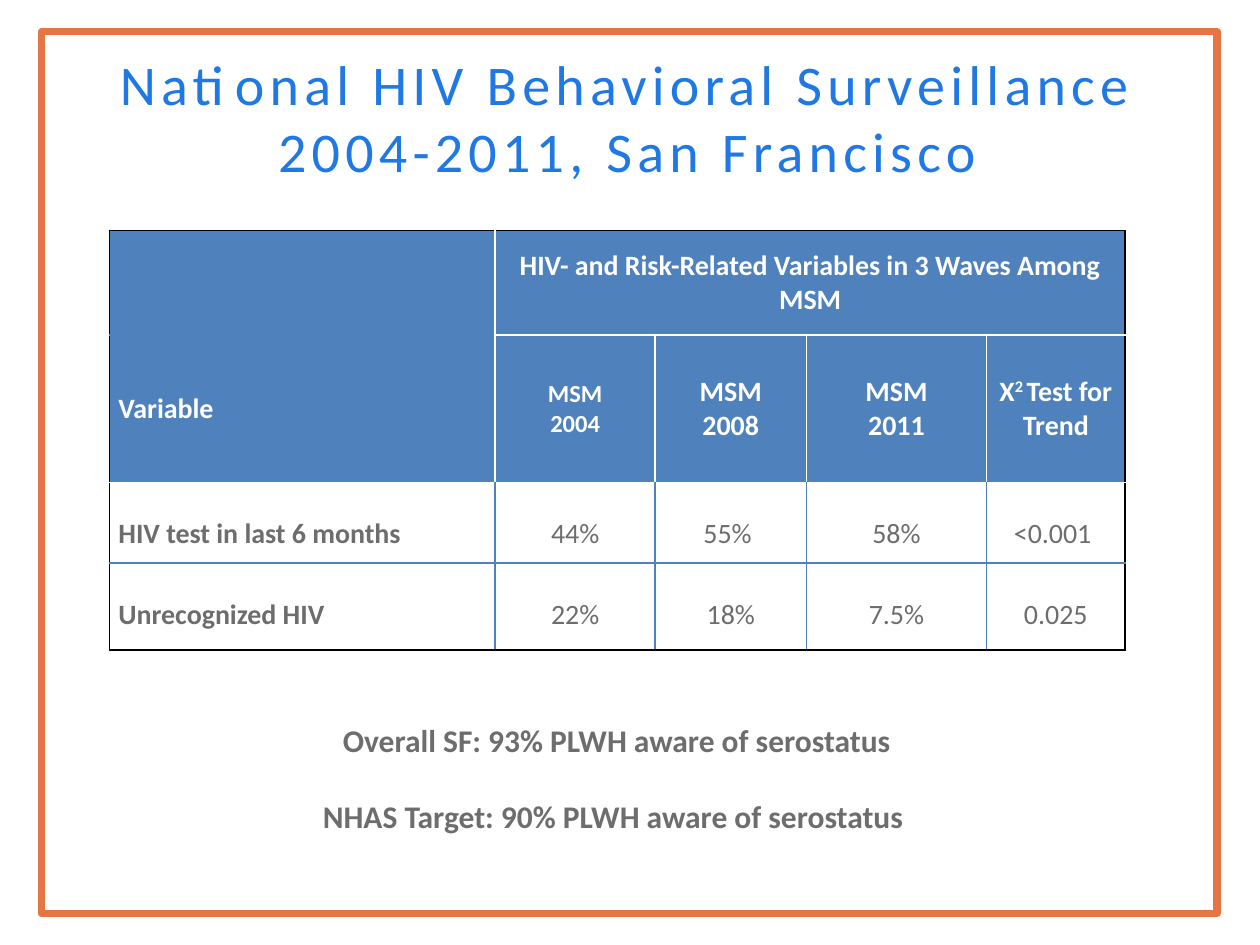
from dataclasses import dataclass

from lxml.etree import SubElement
from pptx import Presentation
from pptx.dml.color import RGBColor
from pptx.enum.shapes import MSO_SHAPE
from pptx.enum.text import MSO_ANCHOR, PP_ALIGN
from pptx.oxml.ns import qn
from pptx.util import Inches, Pt


@dataclass(frozen=True)
class Theme:
    font: str = "Calibri"
    frame: str = "E57543"
    title: str = "1F78E3"
    header: str = "4F81BD"
    white: str = "FFFFFF"
    black: str = "000000"
    text: str = "6D6D6D"
    title_size: int = 32
    note_size: int = 18
    table_size: int = 16
    small_size: int = 14


HEADER_ROWS = 2
COLUMN_WIDTHS = [3.06, 1.27, 1.2, 1.43, 1.1]
ROW_HEIGHTS = [0.83, 1.17, 0.64, 0.69]
ROWS = [
    ["", "HIV- and Risk-Related Variables in 3 Waves Among MSM", "", "", ""],
    ["Variable", "MSM\v2004", "MSM\n2008", "MSM\n2011", "X"],
    ["HIV test in last 6 months", "44%", "55% ", "58%", "<0.001 "],
    ["Unrecognized HIV", "22%", "18%", "7.5%", "0.025"],
]


class SlideBuilder:
    def __init__(self, slide, theme):
        self.slide = slide
        self.theme = theme

    def format_run(self, run, size, color, bold=False):
        run.font.name = self.theme.font
        run.font.size = Pt(size)
        run.font.color.rgb = RGBColor.from_string(color)
        run.font.bold = bold

    def format_frame(self, text_frame, size, color, bold=False, align=PP_ALIGN.CENTER):
        for paragraph in text_frame.paragraphs:
            paragraph.alignment = align
            for run in paragraph.runs:
                self.format_run(run, size, color, bold)

    def frame(self, left, top, width, height):
        shape = self.slide.shapes.add_shape(
            MSO_SHAPE.RECTANGLE, Inches(left), Inches(top), Inches(width), Inches(height))
        shape.shadow.inherit = False
        shape.fill.background()
        shape.line.color.rgb = RGBColor.from_string(self.theme.frame)
        shape.line.width = Pt(4.25)

    def text(self, box, text, size, color, bold=False, anchor=MSO_ANCHOR.TOP, gap=0, spacing=0):
        shape = self.slide.shapes.add_textbox(*(Inches(length) for length in box))
        text_frame = shape.text_frame
        text_frame.word_wrap = True
        text_frame.vertical_anchor = anchor
        text_frame.text = text
        self.format_frame(text_frame, size, color, bold)
        for paragraph in text_frame.paragraphs[1:]:
            paragraph.space_before = Pt(gap)
        if spacing:
            for run in text_frame.paragraphs[0].runs:
                run.font.language_id = None
                run._r.get_or_add_rPr().set("spc", str(spacing * 100))

    def border_colors(self, row, column, span):
        theme = self.theme

        def horizontal(edge):
            if edge in (0, len(ROWS)):
                return theme.black
            # The two header cells above "Variable" read as one
            joined = edge == 1 and column == 0
            return theme.white if edge <= HEADER_ROWS and not joined else theme.header

        def vertical(edge):
            if edge in (0, len(COLUMN_WIDTHS)):
                return theme.black
            return theme.white if row < HEADER_ROWS else theme.header

        return {"a:lnL": vertical(column), "a:lnR": vertical(column + span),
                "a:lnT": horizontal(row), "a:lnB": horizontal(row + 1)}

    def cell(self, cell, text, row, column):
        theme = self.theme
        is_header = row < HEADER_ROWS
        span = cell.span_width if cell.is_merge_origin else 1

        # Borders come before the fill in the cell properties
        properties = cell._tc.get_or_add_tcPr()
        for tag, color in self.border_colors(row, column, span).items():
            line = SubElement(properties, qn(tag), w=str(Pt(1)))
            SubElement(SubElement(line, qn("a:solidFill")), qn("a:srgbClr"), val=color)
        if is_header:
            cell.fill.solid()
            cell.fill.fore_color.rgb = RGBColor.from_string(theme.header)
        else:
            cell.fill.background()

        cell.margin_left = cell.margin_right = Inches(0.07)
        cell.margin_top = cell.margin_bottom = 0
        cell.vertical_anchor = MSO_ANCHOR.MIDDLE if is_header else MSO_ANCHOR.TOP
        if not text:
            return
        cell.text_frame.text = text
        self.format_frame(
            cell.text_frame,
            theme.small_size if (row, column) == (1, 1) else theme.table_size,
            theme.white if is_header else theme.text,
            bold=is_header or column == 0,
            align=PP_ALIGN.LEFT if column == 0 else PP_ALIGN.CENTER)
        if not is_header:
            cell.text_frame.paragraphs[0].line_spacing = 2.0

    def table(self, left, top):
        table = self.slide.shapes.add_table(
            len(ROWS), len(COLUMN_WIDTHS), Inches(left), Inches(top),
            Inches(sum(COLUMN_WIDTHS)), Inches(sum(ROW_HEIGHTS))).table
        table.first_row = table.horz_banding = False
        for column, width in zip(table.columns, COLUMN_WIDTHS):
            column.width = Inches(width)
        for row, height in zip(table.rows, ROW_HEIGHTS):
            row.height = Inches(height)
        table.cell(0, 1).merge(table.cell(0, len(COLUMN_WIDTHS) - 1))
        for row, texts in enumerate(ROWS):
            for column, text in enumerate(texts):
                self.cell(table.cell(row, column), text, row, column)

        # Chi-squared heading with a raised exponent
        paragraph = table.cell(1, 4).text_frame.paragraphs[0]
        for text, baseline in (("2 ", 30000), ("Test for Trend", 0)):
            run = paragraph.add_run()
            run.text = text
            self.format_run(run, self.theme.table_size, self.theme.white, bold=True)
            run._r.get_or_add_rPr().set("baseline", str(baseline))


def main():
    theme = Theme()
    presentation = Presentation()
    presentation.slide_width = Inches(10)
    presentation.slide_height = Inches(7.5)
    slide = presentation.slides.add_slide(presentation.slide_layouts[6])
    builder = SlideBuilder(slide, theme)

    # Frame and title
    builder.frame(0.33, 0.25, 9.33, 7)
    builder.text((0.13, 0.3, 9.7, 1.25),
                 "National HIV Behavioral Surveillance\v2004-2011, San Francisco",
                 theme.title_size, theme.title, anchor=MSO_ANCHOR.MIDDLE, spacing=3)

    # Survey results
    builder.table(0.87, 1.83)

    # Awareness figures
    builder.text((1.22, 5.67, 7.35, 1.01),
                 "Overall SF: 93% PLWH aware of serostatus\n"
                 "NHAS Target: 90% PLWH aware of serostatus ",
                 theme.note_size, theme.text, bold=True, gap=22)

    presentation.save("out.pptx")


if __name__ == "__main__":
    main()
